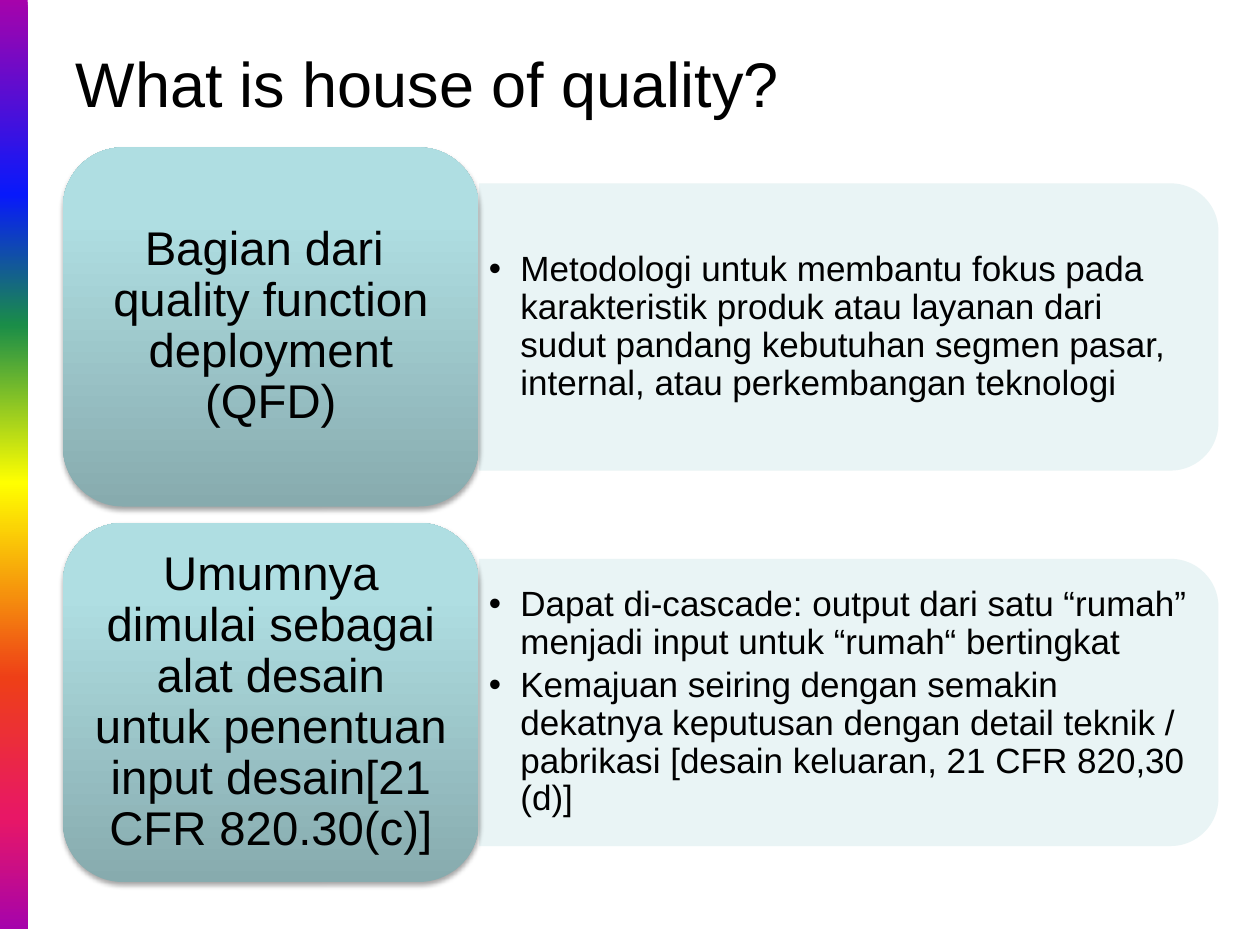
"""Build the house of quality slide."""
from pptx import Presentation
from pptx.dml.color import RGBColor
from pptx.enum.shapes import MSO_SHAPE
from pptx.enum.text import MSO_ANCHOR, MSO_AUTO_SIZE, PP_ALIGN
from pptx.oxml.ns import qn
from pptx.oxml.xmlchemy import OxmlElement
from pptx.util import Inches, Pt

RECT, ROUND = MSO_SHAPE.RECTANGLE, MSO_SHAPE.ROUNDED_RECTANGLE
TABBED = MSO_SHAPE.ROUND_2_SAME_RECTANGLE
MIDDLE, NO_FIT = MSO_ANCHOR.MIDDLE, MSO_AUTO_SIZE.NONE
LEFT, CENTER = PP_ALIGN.LEFT, PP_ALIGN.CENTER

TITLE = "What is house of quality?"
ROWS = [
    ("Bagian dari  quality function deployment (QFD)",
     ["Metodologi untuk membantu fokus pada karakteristik produk atau layanan "
      "dari sudut pandang kebutuhan segmen pasar, internal, atau "
      "perkembangan teknologi"]),
    ("Umumnya dimulai sebagai alat desain untuk penentuan input "
     "desain[21 CFR 820.30(c)]",
     ["Dapat di-cascade: output dari satu “rumah” menjadi input untuk "
      "“rumah“ bertingkat",
      "Kemajuan seiring dengan semakin dekatnya keputusan dengan detail "
      "teknik / pabrikasi [desain keluaran, 21 CFR 820,30 (d)]"]),
]
THEME = {
    "font": "Arial", "ink": "000000", "panel": "E7F3F4",
    "title": 36, "card": 27, "list": 20,
    "rainbow": [(0, "A603AB"), (21, "0819FB"), (35, "1A8D48"), (52, "FFFF00"),
                (73, "EE3F17"), (88, "E81766"), (100, "A603AB")],
    "teal": [(0, "87ABAE"), (80, "AFDEE2"), (100, "AFE0E4")],
}
X, TOP, CARD_W, CARD_H, GAP = 0.5, 1.17, 3.3, 2.85, 0.13
PANEL_W, PANEL_H = 5.87, 2.28
LIST_W, LIST_H = 5.76, 2.05


def node(parent, tag, **attrs):
    item = OxmlElement(tag)
    for key, value in attrs.items():
        item.set(key, str(value))
    parent.append(item)
    return item


def tint(parent, color, alpha):
    rgb = node(parent, "a:srgbClr", val=color)
    node(rgb, "a:alpha", val=alpha * 1000)


def place(shape, x, y, w, h):
    shape.left, shape.top = Inches(x), Inches(y)
    shape.width, shape.height = Inches(w), Inches(h)


def add_box(slide, kind, x, y, w, h):
    box = slide.shapes.add_shape(kind, Inches(x), Inches(y), Inches(w), Inches(h))
    box.shadow.inherit = False
    box.line.fill.background()
    return box


def blend(shape, stops, angle):
    shape.fill.gradient()
    grad = shape.fill._xPr.find(qn("a:gradFill"))
    band = grad.find(qn("a:gsLst"))
    band.clear()
    for pos, color in stops:
        node(node(band, "a:gs", pos=pos * 1000), "a:srgbClr", val=color)
    grad.find(qn("a:lin")).set("ang", str(angle * 60000))


def write(shape, lines, size, align, pads=None, spacing=None, after=0):
    frame = shape.text_frame
    frame.word_wrap = True
    frame.auto_size = NO_FIT
    frame.vertical_anchor = MIDDLE
    if pads:
        frame.margin_left = frame.margin_right = Inches(pads[0])
        frame.margin_top = frame.margin_bottom = Inches(pads[1])
    frame.text = "\n".join(lines)
    for para in frame.paragraphs:
        para.alignment = align
        para.line_spacing = spacing
        para.space_before, para.space_after = Pt(0), Pt(after)
        para.font.name, para.font.size = THEME["font"], Pt(size)
        para.font.color.rgb = RGBColor.from_string(THEME["ink"])


def add_panel(slide, x, mid):
    panel = add_box(slide, TABBED, x + (PANEL_W - PANEL_H) / 2,
                    mid - PANEL_W / 2, PANEL_H, PANEL_W)
    panel.rotation = 90
    panel.fill.solid()
    panel.fill.fore_color.rgb = RGBColor.from_string(THEME["panel"])
    node(panel.fill._xPr.find(qn("a:solidFill"))[0], "a:alpha", val=90000)


def add_card(slide, y, text):
    card = add_box(slide, ROUND, X, y, CARD_W, CARD_H)
    blend(card, THEME["teal"], 270)
    glow = card._element.spPr.find(qn("a:effectLst"))
    shade = node(glow, "a:outerShdw", blurRad=Pt(3.1), dist=Pt(1.8),
                 dir=5400000, rotWithShape=0)
    tint(shade, "000000", 35)
    write(card, [text], THEME["card"], CENTER, (0.11, 0.06), 0.9)


def fill_list(slide, holder, x, mid, points):
    place(holder, x, mid - LIST_H / 2, LIST_W, LIST_H)
    write(holder, points, THEME["list"], LEFT, (0.08, 0.04), 0.9, 3)
    for para in holder.text_frame.paragraphs:
        props = para._p.get_or_add_pPr()
        props.set("marL", str(Inches(0.25)))
        props.set("indent", str(Inches(-0.25)))
        bullet = OxmlElement("a:buChar")
        bullet.set("char", "•")
        props.insert_element_before(bullet, "a:tabLst", "a:defRPr", "a:extLst")
    slide.shapes._spTree.append(holder._element)


def main():
    deck = Presentation()
    deck.slide_width, deck.slide_height = Inches(10), Inches(7.5)
    slide = deck.slides.add_slide(deck.slide_layouts[3])
    title, *lists = slide.placeholders
    stripe = add_box(slide, RECT, 0, 0, 0.22, 7.37)
    blend(stripe, THEME["rainbow"], 90)
    place(title, 0.5, 0.3, 9, 0.7)
    write(title, [TITLE], THEME["title"], LEFT)
    for row, ((head, points), holder) in enumerate(zip(ROWS, lists)):
        y = TOP + row * (CARD_H + GAP)
        mid = y + CARD_H / 2
        add_panel(slide, X + CARD_W, mid)
        add_card(slide, y, head)
        fill_list(slide, holder, X + CARD_W, mid, points)
    deck.save("out.pptx")


if __name__ == "__main__":
    main()
